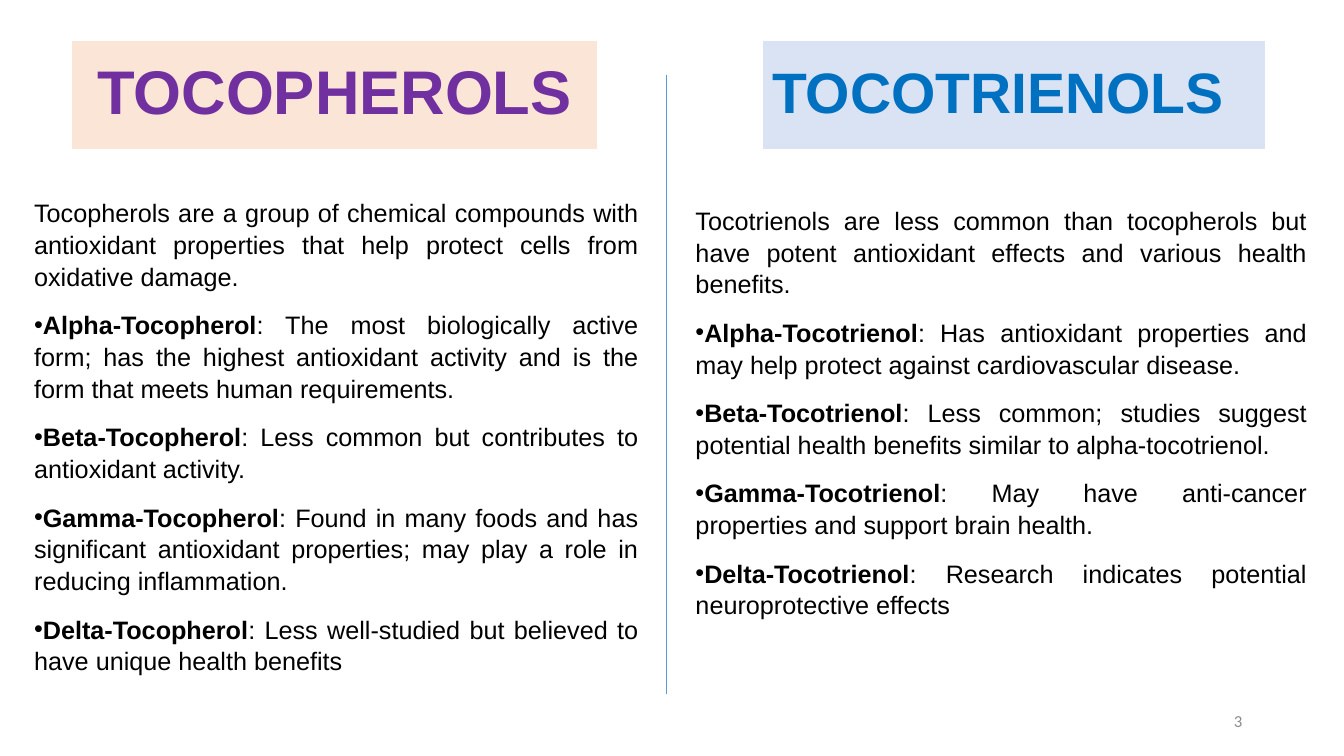
from lxml.etree import SubElement
from pptx import Presentation
from pptx.dml.color import RGBColor
from pptx.enum.shapes import MSO_CONNECTOR, MSO_SHAPE
from pptx.enum.text import MSO_ANCHOR, MSO_AUTO_SIZE, PP_ALIGN
from pptx.oxml.ns import qn
from pptx.util import Inches, Pt

COLOURS = {
    "peach": "FBE5D6",
    "pale blue": "DAE3F3",
    "purple": "7030A0",
    "blue": "0070C0",
    "divider": "5B9BD5",
    "grey": "8C8C8C",
    "black": "000000",
    "white": "FFFFFF",
}

TOCOPHEROLS = [
    ("", "Tocopherols are a group of chemical compounds with antioxidant properties "
         "that help protect cells from oxidative damage."),
    ("Alpha-Tocopherol", ": The most biologically active form; has the highest antioxidant "
                         "activity and is the form that meets human requirements."),
    ("Beta-Tocopherol", ": Less common but contributes to antioxidant activity."),
    ("Gamma-Tocopherol", ": Found in many foods and has significant antioxidant properties; "
                         "may play a role in reducing inflammation."),
    ("Delta-Tocopherol", ": Less well-studied but believed to have unique health benefits"),
]

TOCOTRIENOLS = [
    ("", "Tocotrienols are less common than tocopherols but have potent antioxidant "
         "effects and various health benefits."),
    ("Alpha-Tocotrienol", ": Has antioxidant properties and may help protect against "
                          "cardiovascular disease."),
    ("Beta-Tocotrienol", ": Less common; studies suggest potential health benefits similar "
                         "to alpha-tocotrienol."),
    ("Gamma-Tocotrienol", ": May have anti-cancer properties and support brain health."),
    ("Delta-Tocotrienol", ": Research indicates potential neuroprotective effects"),
]


def colour(name):
    return RGBColor.from_string(COLOURS[name])


def apply(target, **values):
    for name, value in values.items():
        setattr(target, name, value)


class ComparisonPage:
    font_name = "Arial"
    body_size = 18

    def __init__(self, deck):
        self.page = deck.slides.add_slide(deck.slide_layouts[6])

    def add_span(self, para, text, size, ink, bold=False, font_name=font_name):
        span = para.add_run()
        span.text = text
        apply(span.font, name=font_name, size=Pt(size), bold=bold)
        span.font.color.rgb = colour(ink)

    def text_box(self, place):
        box = self.page.shapes.add_textbox(*map(Inches, place))
        apply(box.text_frame, word_wrap=True, vertical_anchor=MSO_ANCHOR.MIDDLE)
        return box.text_frame

    def heading(self, text, place, fill, ink, size, alignment):
        box = self.page.shapes.add_shape(MSO_SHAPE.RECTANGLE, *map(Inches, place))
        box.shadow.inherit = False
        box.fill.solid()
        box.fill.fore_color.rgb = colour(fill)
        box.line.color.rgb = colour("white")
        box.line.width = Pt(0.75)
        apply(box.text_frame, word_wrap=True, vertical_anchor=MSO_ANCHOR.MIDDLE)
        para = box.text_frame.paragraphs[0]
        apply(para, alignment=alignment, line_spacing=0.9)
        self.add_span(para, text, size, ink, bold=True)

    def divider(self, left, top, bottom):
        line = self.page.shapes.add_connector(
            MSO_CONNECTOR.STRAIGHT, *map(Inches, (left, top, left, bottom)))
        line.line.color.rgb = colour("divider")
        line.line.width = Pt(0.5)
        SubElement(line.element.spPr, qn("a:effectLst"))

    def bullet(self, para):
        properties = para._p.get_or_add_pPr()
        properties.set("marL", "0")
        properties.set("indent", "0")
        SubElement(properties, qn("a:buFont")).set("typeface", self.font_name)
        SubElement(properties, qn("a:buChar")).set("char", "•")

    def body(self, entries, place):
        frame = self.text_box(place)
        frame.auto_size = MSO_AUTO_SIZE.SHAPE_TO_FIT_TEXT
        for index, (term, description) in enumerate(entries):
            para = frame.add_paragraph() if index else frame.paragraphs[0]
            apply(para, alignment=PP_ALIGN.JUSTIFY, line_spacing=1.05, space_after=Pt(12))
            if term:
                self.bullet(para)
                self.add_span(para, term, self.body_size, "black", bold=True)
            self.add_span(para, description, self.body_size, "black")

    def page_number(self, text, place):
        para = self.text_box(place).paragraphs[0]
        para.alignment = PP_ALIGN.RIGHT
        self.add_span(para, text, 12, "grey", font_name="Calibri")


def main():
    deck = Presentation()
    apply(deck, slide_width=Inches(13.33), slide_height=Inches(7.5))
    page = ComparisonPage(deck)
    page.heading("TOCOPHEROLS", (0.71, 0.4, 5.22, 1.08), "peach", "purple", 44, PP_ALIGN.CENTER)
    page.heading("TOCOTRIENOLS", (7.56, 0.4, 4.99, 1.08), "pale blue", "blue", 40.7, PP_ALIGN.LEFT)
    page.divider(6.61, 0.74, 6.89)
    page.page_number("3", (9.42, 6.95, 3, 0.4))
    page.body(TOCOPHEROLS, (0.24, 1.97, 6.19, 4.71))
    page.body(TOCOTRIENOLS, (6.8, 2.03, 6.26, 4.11))
    deck.save("out.pptx")


if __name__ == "__main__":
    main()
